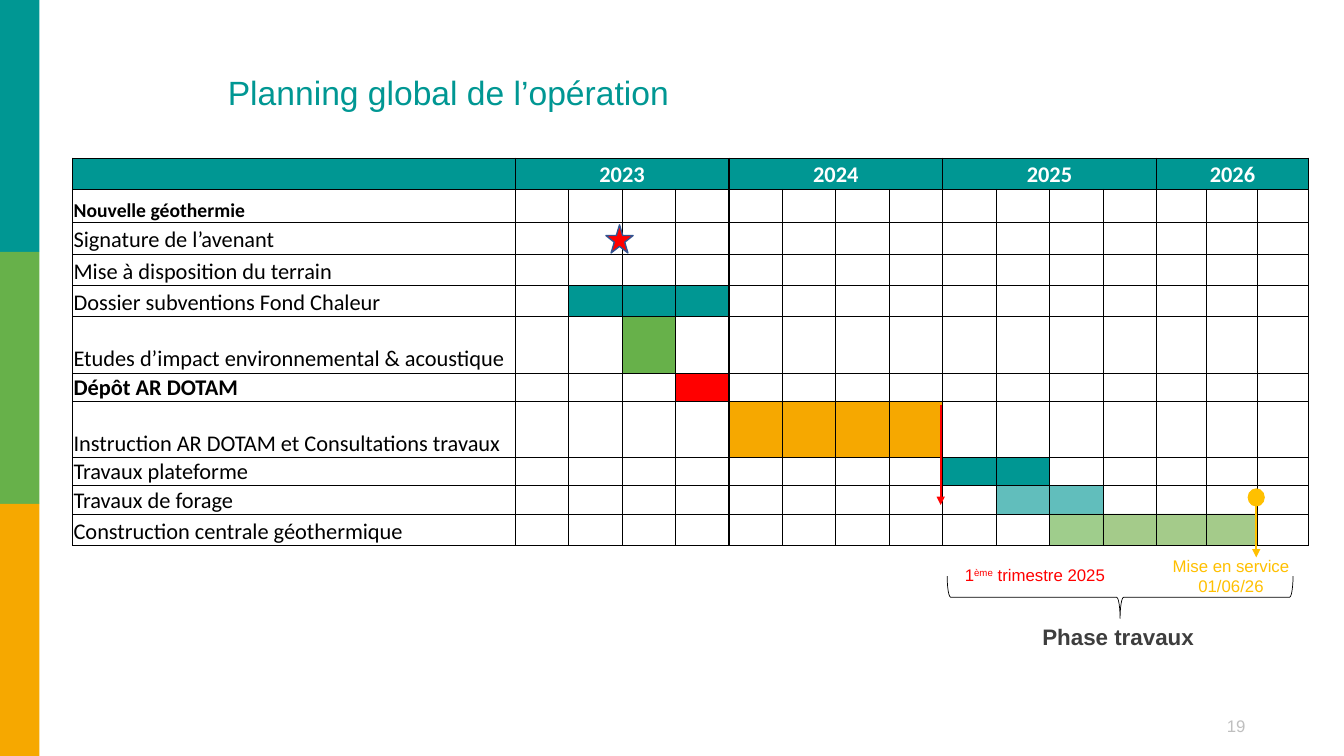
"""Build the global schedule slide of the geothermal operation."""
from lxml import etree
from pptx import Presentation
from pptx.dml.color import RGBColor
from pptx.enum.shapes import MSO_CONNECTOR as CONN, MSO_SHAPE as SHAPE
from pptx.enum.text import MSO_ANCHOR as ANCHOR, PP_ALIGN as ALIGN
from pptx.oxml.ns import qn
from pptx.util import Inches, Pt

C = {"teal": "009793", "green": "67B14A", "leaf": "70AD47", "orange": "F6A800",
     "red": "FF0000", "gold": "FFC000", "navy": "325491", "black": "000000",
     "white": "FFFFFF", "dark": "3E3E3E", "grey": "BFBFBF"}

TITLE = "Planning global de l’opération"
YEARS = [("2023", 4), ("2024", 4), ("2025", 4), ("2026", 3)]
TASKS = [
    ("Nouvelle géothermie", 14, True, []),
    ("Signature de l’avenant", 16, False, []),
    ("Mise à disposition du terrain", 16, False, []),
    ("Dossier subventions Fond Chaleur", 16, False, [(2, 4, "teal", 100)]),
    ("Etudes d’impact environnemental & acoustique", 16, False, [(3, 3, "green", 100)]),
    ("Dépôt AR DOTAM", 16, True, [(4, 4, "red", 100)]),
    ("Instruction AR DOTAM et Consultations travaux", 16, False, [(5, 8, "orange", 100)]),
    ("Travaux plateforme", 16, False, [(9, 10, "teal", 100)]),
    ("Travaux de forage", 16, False, [(10, 11, "teal", 62)]),
    ("Construction centrale géothermique", 16, False,
     [(11, 11, "green", 63), (12, 14, "leaf", 63)]),
]
COLS = [4.39] + [0.53] * 12 + [0.5, 0.5, 0.51]
ROWS = [0.31, 0.33, 0.31, 0.31, 0.31, 0.56, 0.28, 0.56, 0.28, 0.28, 0.31]
THICK_X = {0, 1, 5, 9, 13, 14, 15, 16}
THICK_Y = {0, 1, len(ROWS)}
BANDS = ["teal", "green", "orange"]
LABELS = [
    ((11.99, 7.05, 0.54, 0.3), [("19", 0)], 12, "grey", False, ALIGN.CENTER, ANCHOR.TOP),
    ((9.47, 5.55, 1.89, 0.3), [("1", 0), ("ème", 30000), (" trimestre 2025", 0)],
     12, "red", False, ALIGN.LEFT, ANCHOR.BOTTOM),
    ((11.44, 5.46, 1.54, 0.5), [("Mise en service 01/06/26", 0)],
     12, "gold", False, ALIGN.CENTER, ANCHOR.BOTTOM),
    ((9.14, 6.13, 3.9, 0.37), [("Phase travaux", 0)],
     16, "dark", True, ALIGN.CENTER, ANCHOR.TOP),
]


def rgb(name):
    return RGBColor.from_string(C[name])


def box(at):
    return [Inches(v) for v in at]


def add_run(p, text, size, color, font="Arial", bold=False):
    r = p.add_run()
    r.text = text
    r.font.name, r.font.size, r.font.bold = font, Pt(size), bold
    r.font.color.rgb = rgb(color)
    return r


def add_shape(slide, kind, at, fill=None, line=None, width=1):
    sp = slide.shapes.add_shape(kind, *box(at))
    sp.shadow.inherit = False
    if fill:
        sp.fill.solid()
        sp.fill.fore_color.rgb = rgb(fill)
    else:
        sp.fill.background()
    if line:
        sp.line.color.rgb = rgb(line)
        sp.line.width = Pt(width)
    else:
        sp.line.fill.background()
    return sp


def add_arrow(slide, x, top, bottom, color):
    cx = slide.shapes.add_connector(CONN.STRAIGHT, *box((x, top, x, bottom)))
    cx.line.color.rgb = rgb(color)
    cx.line.width = Pt(1.5)
    etree.SubElement(cx.line._get_or_add_ln(), qn("a:tailEnd"), type="triangle")
    etree.SubElement(cx._element.spPr, qn("a:effectLst"))


def add_label(slide, at, runs, size, color, bold, align, anchor):
    tf = slide.shapes.add_textbox(*box(at)).text_frame
    tf.word_wrap = True
    tf.vertical_anchor = anchor
    p = tf.paragraphs[0]
    p.alignment = align
    for text, raised in runs:
        r = add_run(p, text, size, color, bold=bold)
        if raised:
            r.font._element.set("baseline", str(raised))


def fill_cell(cell, color, alpha=100):
    cell.fill.solid()
    cell.fill.fore_color.rgb = rgb(color)
    if alpha < 100:
        clr = cell._tc.tcPr.find(".//" + qn("a:srgbClr"))
        etree.SubElement(clr, qn("a:alpha"), val=str(alpha * 1000))


def set_borders(cell, row, col, span):
    edges = [("a:lnL", col in THICK_X), ("a:lnR", col + span in THICK_X),
             ("a:lnT", row in THICK_Y), ("a:lnB", row + 1 in THICK_Y)]
    for i, (tag, thick) in enumerate(edges):
        ln = etree.Element(qn(tag), w=str(Pt(1 if thick else 0.5)))
        fill = etree.SubElement(ln, qn("a:solidFill"))
        etree.SubElement(fill, qn("a:srgbClr"), val=C["black"])
        cell._tc.tcPr.insert(i, ln)


def add_schedule(slide):
    at = (0.72, 1.57, sum(COLS), sum(ROWS))
    tbl = slide.shapes.add_table(len(ROWS), len(COLS), *box(at)).table
    tbl.first_row = tbl.horz_banding = False
    for col, w in zip(tbl.columns, COLS):
        col.width = Inches(w)
    for row, h in zip(tbl.rows, ROWS):
        row.height = Inches(h)

    spans, start = {}, 1
    for year, n in YEARS:
        spans[start] = n
        tbl.cell(0, start).merge(tbl.cell(0, start + n - 1))
        p = tbl.cell(0, start).text_frame.paragraphs[0]
        p.alignment = ALIGN.CENTER
        add_run(p, year, 16, "white", "Calibri", True)
        start += n

    for i, (task, size, bold, _) in enumerate(TASKS, 1):
        p = tbl.cell(i, 0).text_frame.paragraphs[0]
        add_run(p, task, size, "black", "Calibri", bold)

    for i in range(len(ROWS)):
        for j in range(len(COLS)):
            cell = tbl.cell(i, j)
            cell.margin_left = cell.margin_right = cell.margin_top = Inches(0.01)
            cell.margin_bottom = 0
            cell.vertical_anchor = ANCHOR.BOTTOM if i else ANCHOR.MIDDLE
            if i:
                cell.fill.background()
            else:
                fill_cell(cell, "teal")
            for first, last, color, alpha in TASKS[i - 1][3] if i else []:
                if first <= j <= last:
                    fill_cell(cell, color, alpha)
            set_borders(cell, i, j, 1 if i else spans.get(j, 1))
            p = cell.text_frame.paragraphs[0]
            if not p.runs:
                etree.SubElement(p._p, qn("a:endParaRPr"), sz="1000")


def main():
    prs = Presentation()
    prs.slide_width, prs.slide_height = Inches(13.33), Inches(7.5)
    slide = prs.slides.add_slide(prs.slide_layouts[5])

    for i, color in enumerate(BANDS):
        add_shape(slide, SHAPE.RECTANGLE, (0, 2.5 * i, 0.39, 2.5), color)

    title = slide.shapes.title
    title.left, title.top, title.width, title.height = box((2.16, 0.74, 10.13, 0.4))
    tf = title.text_frame
    tf.vertical_anchor = ANCHOR.MIDDLE
    p = tf.paragraphs[0]
    p.alignment = ALIGN.LEFT
    p.line_spacing = 0.9
    add_run(p, TITLE, 24, "teal")

    for label in LABELS:
        add_label(slide, *label)
    brace = add_shape(slide, SHAPE.LEFT_BRACE, (10.9, 4.21, 0.42, 3.43), None, "black", 0.5)
    brace.rotation = 270

    add_schedule(slide)
    add_shape(slide, SHAPE.STAR_5_POINT, (6.01, 2.23, 0.27, 0.28), "red", "navy")
    add_arrow(slide, 9.33, 4.02, 5.01, "red")
    add_shape(slide, SHAPE.OVAL, (12.38, 4.85, 0.16, 0.17), "gold", "gold", 0.75)
    add_arrow(slide, 12.46, 5.02, 5.53, "gold")
    prs.save("out.pptx")


if __name__ == "__main__":
    main()
